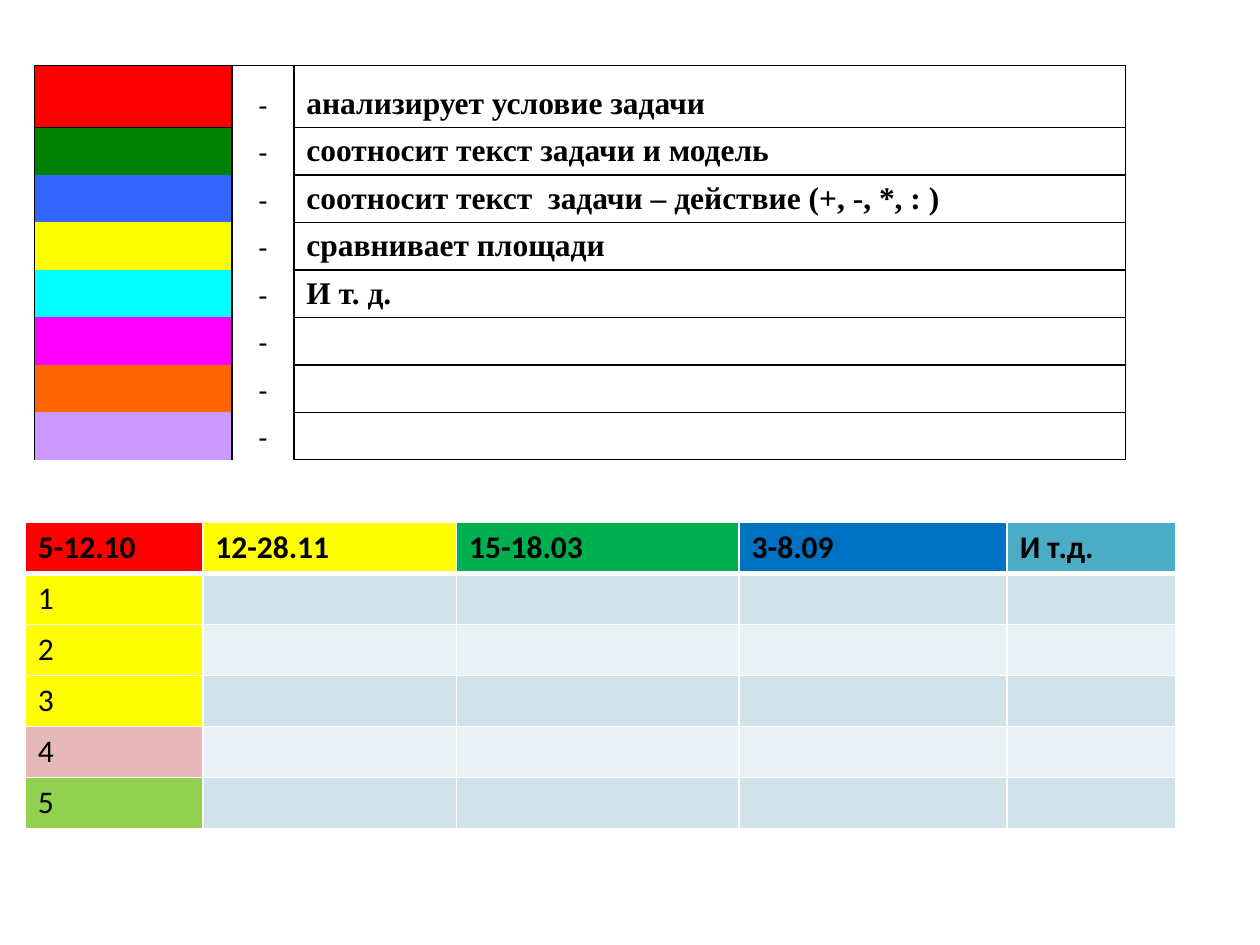
from lxml import etree
from pptx import Presentation
from pptx.dml.color import RGBColor
from pptx.enum import text
from pptx.oxml import ns
from pptx.util import Pt

BLACK = RGBColor(0, 0, 0)
WHITE = RGBColor(255, 255, 255)
RED = RGBColor(255, 0, 0)
YELLOW = RGBColor(255, 255, 0)
GREEN = RGBColor(0, 128, 0)
BLUE = RGBColor(0x33, 0x66, 0xFF)
CYAN = RGBColor(0, 255, 255)
MAGENTA = RGBColor(255, 0, 255)
ORANGE = RGBColor(255, 0x66, 0)
LILAC = RGBColor(0xCC, 0x99, 0xFF)
EMERALD = RGBColor(0, 0xB0, 0x50)
NAVY = RGBColor(0, 0x70, 0xC0)
TEAL = RGBColor(0x4B, 0xAC, 0xC6)
PINK = RGBColor(0xE6, 0xB9, 0xB8)
LIME = RGBColor(0x92, 0xD0, 0x50)
BAND_DARK = RGBColor(0xD0, 0xE3, 0xEA)
BAND_LIGHT = RGBColor(0xE9, 0xF1, 0xF5)


def add_grid(s, left, top, widths, heights):
    table = s.shapes.add_table(len(heights), len(widths), Pt(left), Pt(top),
                               Pt(sum(widths)), Pt(sum(heights))).table
    table.first_row = table.horz_banding = False
    for col, width in zip(table.columns, widths):
        col.width = Pt(width)
    for row, height in zip(table.rows, heights):
        row.height = Pt(height)
    return table


def fill_cell(cell, words, fill, font, size, bold, line, borders):
    tcPr = cell._tc.get_or_add_tcPr()
    for side in "LRTB":
        width = borders.get(side, 0)
        ln = etree.SubElement(tcPr, ns.qn("a:ln" + side), w=str(Pt(width)))
        if width:
            solid = etree.SubElement(ln, ns.qn("a:solidFill"))
            etree.SubElement(solid, ns.qn("a:srgbClr"), val=str(line))
        else:
            etree.SubElement(ln, ns.qn("a:noFill"))
    cell.fill.solid()
    cell.fill.fore_color.rgb = fill
    if not words:
        cell.margin_top = cell.margin_bottom = 0
        return
    p = cell.text_frame.paragraphs[0]
    p.text = words
    p.font.name = font
    p.font.size = Pt(size)
    p.font.bold = bold
    p.font.color.rgb = BLACK


prs = Presentation()
prs.slide_width, prs.slide_height = Pt(720), Pt(540)
s = prs.slides.add_slide(prs.slide_layouts[6])

legend = [
    (RED, "анализирует условие задачи"),
    (GREEN, "соотносит текст задачи и модель"),
    (BLUE, "соотносит текст  задачи – действие (+, -, *, : )"),
    (YELLOW, "сравнивает площади"),
    (CYAN, "И т. д."),
    (MAGENTA, ""),
    (ORANGE, ""),
    (LILAC, ""),
]
table = add_grid(s, 19.6, 37.5, [113, 35.3, 475.2], [35.3] + [27.1] * 7)
for i, (color, skill) in enumerate(legend):
    sides = {"L": 1, "R": 1}
    if i == 0:
        sides["T"] = 1
    swatch = dict(sides)
    if i == 0:
        swatch["B"] = 1
    if i == 1:
        swatch["T"] = 1
    boxed = dict.fromkeys("LRTB", 1)
    swatch_cell, dash, label = table.rows[i].cells
    fill_cell(swatch_cell, "", color, "Arial", 16, False, BLACK, swatch)
    fill_cell(dash, "-", WHITE, "Arial", 16, False, BLACK, sides)
    fill_cell(label, skill, WHITE, "Times New Roman", 18, True, BLACK, boxed)
    dash.text_frame.paragraphs[0].alignment = text.PP_ALIGN.CENTER
    dash.vertical_anchor = label.vertical_anchor = text.MSO_ANCHOR.BOTTOM

periods = [("5-12.10", RED), ("12-28.11", YELLOW), ("15-18.03", EMERALD),
           ("3-8.09", NAVY), ("И т.д.", TEAL)]
marks = [YELLOW, YELLOW, YELLOW, PINK, LIME]
rows = [periods]
for i, color in enumerate(marks):
    band = BAND_LIGHT if i % 2 else BAND_DARK
    rows.append([(str(i + 1), color)] + [("", band)] * 4)

table = add_grid(s, 14.4, 298.4, [101.5, 145, 161.5, 153.2, 96.5], [29.2] * 6)
for i, row in enumerate(rows):
    borders = {"L": 1, "R": 1, "T": 3 if i == 1 else 1, "B": 3 if i == 0 else 1}
    for cell, (words, fill) in zip(table.rows[i].cells, row):
        fill_cell(cell, words, fill, "Calibri", 18, i == 0, WHITE, borders)

prs.save("out.pptx")
